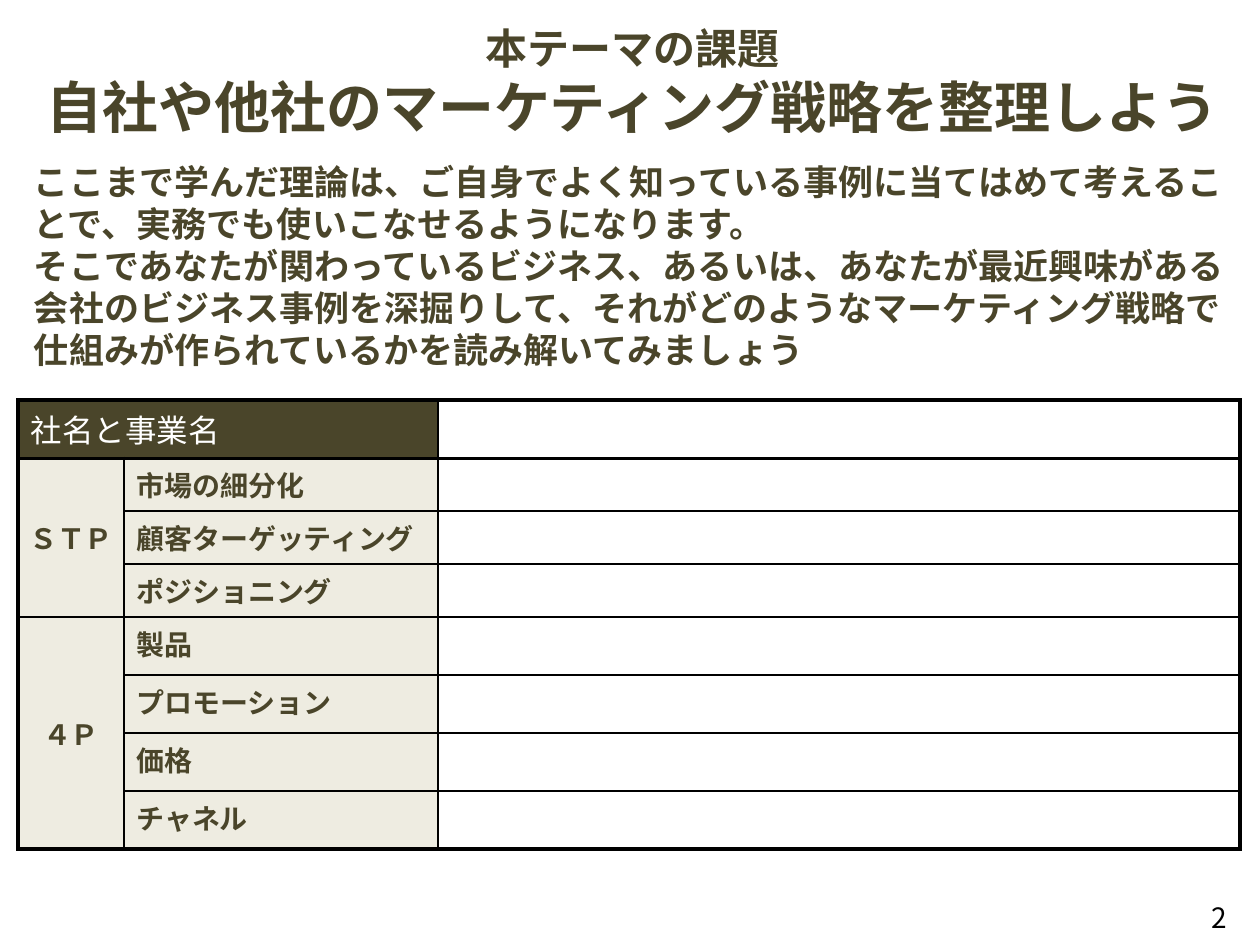
from lxml.etree import SubElement
from pptx import Presentation
from pptx.dml.color import RGBColor
from pptx.enum.text import MSO_ANCHOR, MSO_AUTO_SIZE, PP_ALIGN
from pptx.oxml.ns import qn
from pptx.util import Inches, Pt

PX = Inches(10) / 1260
THEME = {
    "font": "Noto Sans CJK JP",
    "olive": "4A452A", "cream": "EEECE1", "white": "FFFFFF", "black": "000000",
    "lead": 24, "headline": 32, "body": 20, "header": 18, "label": 16,
    "thin": 1, "thick": 2.25,
}


def px(length):
    return round(length * PX)


def write(paragraph, text, size, color, bold=True):
    run = paragraph.add_run()
    run.text = text
    styles = {"name": THEME["font"], "size": Pt(THEME[size]), "bold": bold}
    for attribute, value in styles.items():
        setattr(run.font, attribute, value)
    run.font.color.rgb = RGBColor.from_string(THEME[color])
    SubElement(run.font._element, qn("a:ea"), typeface=THEME["font"])


prs = Presentation()
prs.slide_width, prs.slide_height = px(1260), px(945)
slide = prs.slides.add_slide(prs.slide_layouts[1])
heading, introduction = slide.placeholders
page_number = slide.shapes.add_textbox(0, 0, px(262), px(63))

places = [
    (heading, (3, 16, 1260, 121), MSO_ANCHOR.TOP),
    (introduction, (21, 154, 1222, 223), MSO_ANCHOR.TOP),
    (page_number, (978, 886, 262, 63), MSO_ANCHOR.MIDDLE),
]
for block, bounds, anchor in places:
    for attribute, length in zip(("left", "top", "width", "height"), bounds):
        setattr(block, attribute, px(length))
    frame_format = {
        "word_wrap": True, "auto_size": MSO_AUTO_SIZE.NONE, "vertical_anchor": anchor,
        "margin_left": px(13), "margin_right": px(13),
        "margin_top": px(6), "margin_bottom": px(6),
    }
    for attribute, value in frame_format.items():
        setattr(block.text_frame, attribute, value)

headline = heading.text_frame.paragraphs[0]
headline.alignment = PP_ALIGN.CENTER
write(headline, "本テーマの課題", "lead", "olive")
headline.add_line_break()
write(headline, "自社や他社のマーケティング戦略を整理しよう", "headline", "olive")

sentences = [
    "ここまで学んだ理論は、ご自身でよく知っている事例に当てはめて考えることで、実務でも使いこなせるようになります。",
    "そこであなたが関わっているビジネス、あるいは、あなたが最近興味がある会社のビジネス事例を深掘りして、それがどのようなマーケティング戦略で仕組みが作られているかを読み解いてみましょう",
]
introduction.text_frame.text = "\n" * (len(sentences) - 1)
for paragraph, sentence in zip(introduction.text_frame.paragraphs, sentences):
    properties = paragraph._p.get_or_add_pPr()
    properties.set("marL", "0")
    properties.set("indent", "0")
    SubElement(properties, qn("a:buNone"))
    paragraph.space_before = Pt(0)
    write(paragraph, sentence, "body", "olive")

number = page_number.text_frame.paragraphs[0]
number.alignment = PP_ALIGN.RIGHT
write(number, "2", "label", "black", False)

frameworks = {
    "ＳＴＰ": ["市場の細分化", "顧客ターゲッティング", "ポジショニング"],
    "４Ｐ": ["製品", "プロモーション", "価格", "チャネル"],
}
last_group = len(frameworks["ＳＴＰ"]) + 1
columns = [106, 314, 802]
rows = [58] + [53] * 3 + [58] * 4
worksheet = slide.shapes.add_table(
    len(rows), len(columns), px(18), px(400), px(sum(columns)), px(sum(rows))
).table
worksheet.first_row = worksheet.horz_banding = False
for column, width in zip(worksheet.columns, columns):
    column.width = px(width)
for row, height in zip(worksheet.rows, rows):
    row.height = px(height)

for r in range(len(rows)):
    for c in range(len(columns)):
        cell = worksheet.cell(r, c)
        thick_edges = {
            "lnL": c == 0, "lnR": c == len(columns) - 1, "lnT": r <= 1,
            "lnB": r in (0, len(rows) - 1) or (c == 0 and r >= last_group),
        }
        for edge, thick in thick_edges.items():
            weight = Pt(THEME["thick" if thick else "thin"])
            line = SubElement(cell._tc.get_or_add_tcPr(), qn("a:" + edge), w=str(weight))
            SubElement(SubElement(line, qn("a:solidFill")), qn("a:srgbClr"), val=THEME["black"])
        if c == 2:
            cell.fill.background()
            cell.margin_top = cell.margin_bottom = 0
        else:
            cell.fill.solid()
            cell.fill.fore_color.rgb = RGBColor.from_string(THEME["cream" if r else "olive"])

business = worksheet.cell(0, 0)
business.merge(worksheet.cell(0, 1))
write(business.text_frame.paragraphs[0], "社名と事業名", "header", "white", False)

first = 1
for framework, elements in frameworks.items():
    group = worksheet.cell(first, 0)
    group.merge(worksheet.cell(first + len(elements) - 1, 0))
    group.vertical_anchor = MSO_ANCHOR.MIDDLE
    group.margin_left = group.margin_right = px(5)
    group.text_frame.paragraphs[0].alignment = PP_ALIGN.CENTER
    write(group.text_frame.paragraphs[0], framework, "label", "olive")
    for r, element in enumerate(elements, first):
        write(worksheet.cell(r, 1).text_frame.paragraphs[0], element, "label", "olive")
    first += len(elements)

prs.save("out.pptx")
